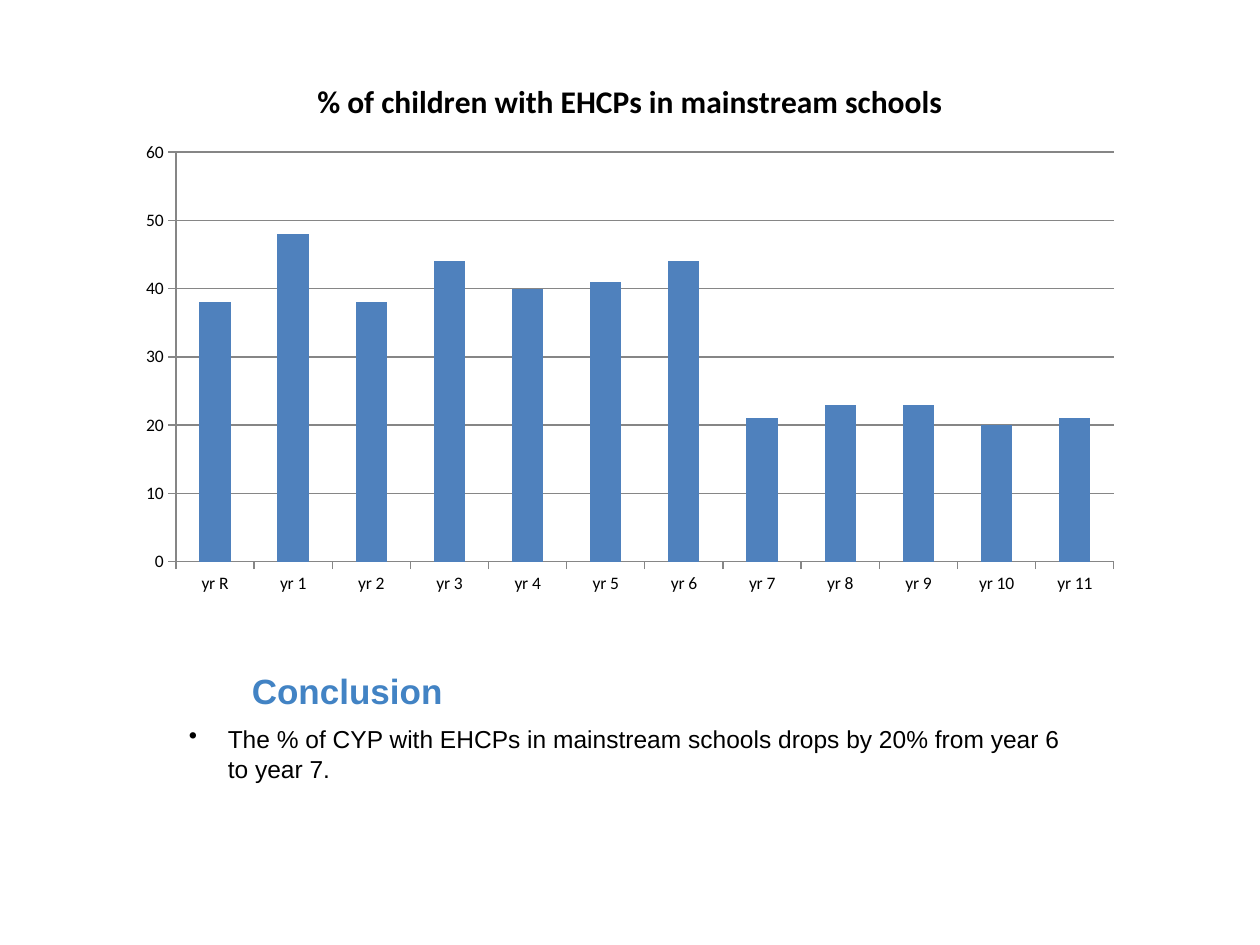
import pptx
import pptx.chart.data
import pptx.dml.color
import pptx.enum.chart
import pptx.enum.text
import pptx.oxml
import pptx.oxml.ns
import pptx.util

BLACK = pptx.dml.color.RGBColor(0x00, 0x00, 0x00)
GRAY = pptx.dml.color.RGBColor(0x86, 0x86, 0x86)
BAR_BLUE = pptx.dml.color.RGBColor(0x4F, 0x81, 0xBD)
HEADING_BLUE = pptx.dml.color.RGBColor(0x42, 0x83, 0xC4)

HEADLINE = "% of children with EHCPs in mainstream schools"
YEARS = ["yr R"] + [f"yr {year}" for year in range(1, 12)]
SHARES = [38, 48, 38, 44, 40, 41, 44, 21, 23, 23, 20, 21]


class SlideBuilder:
    """Holds the style and the current slide; boxes are shares of the slide's size."""

    text_font = "Arial"
    chart_font = "Calibri"

    def __init__(self, deck):
        self.width, self.height = deck.slide_width, deck.slide_height
        self.slide = deck.slides.add_slide(deck.slide_layouts[6])

    def box(self, left, top, width, height):
        return (int(left * self.width), int(top * self.height),
                int(width * self.width), int(height * self.height))

    def style(self, font, color, **values):
        for name, value in values.items():
            setattr(font, name, value)
        font.color.rgb = color

    def text(self, words, place, size, color, bold=False,
             anchor=pptx.enum.text.MSO_ANCHOR.TOP):
        frame = self.slide.shapes.add_textbox(*self.box(*place)).text_frame
        frame.word_wrap = True
        frame.vertical_anchor = anchor
        paragraph = frame.paragraphs[0]
        run = paragraph.add_run()
        run.text = words
        self.style(run.font, color, name=self.text_font,
                   size=pptx.util.Pt(size), bold=bold)
        return paragraph

    def bullet(self, words, place, size, color, indent):
        paragraph = self.text(words, place, size, color)
        paragraph.space_before = pptx.util.Pt(size * 0.2)
        properties = paragraph._p.get_or_add_pPr()
        hang = pptx.util.Inches(indent)
        properties.set("marL", str(hang))
        properties.set("indent", str(-hang))
        properties.append(pptx.oxml.parse_xml(
            f'<a:buChar {pptx.oxml.ns.nsdecls("a")} char="•"/>'))

    def column_chart(self, title, categories, values, place, top_value, step):
        data = pptx.chart.data.CategoryChartData()
        data.categories = categories
        data.add_series(title, values)
        chart = self.slide.shapes.add_chart(
            pptx.enum.chart.XL_CHART_TYPE.COLUMN_CLUSTERED,
            *self.box(*place), data).chart
        chart.has_legend = False
        self.style(chart.font, BLACK, name=self.chart_font, size=pptx.util.Pt(10))

        # Chart title
        chart.has_title = True
        chart.chart_title.include_in_layout = False
        heading = chart.chart_title.text_frame
        heading.text = title
        self.style(heading.paragraphs[0].runs[0].font, BLACK,
                   name=self.chart_font, size=pptx.util.Pt(18), bold=True)

        # Columns
        plot = chart.plots[0]
        plot.gap_width = 150
        plot.vary_by_categories = False
        columns = plot.series[0]
        columns.format.fill.solid()
        columns.format.fill.fore_color.rgb = BAR_BLUE

        # Axes and gridlines
        scale = {"minimum_scale": 0, "maximum_scale": top_value,
                 "major_unit": step, "has_major_gridlines": True}
        for name, value in scale.items():
            setattr(chart.value_axis, name, value)
        for axis in (chart.category_axis, chart.value_axis):
            axis.major_tick_mark = pptx.enum.chart.XL_TICK_MARK.OUTSIDE
        for part in (chart.category_axis, chart.value_axis,
                     chart.value_axis.major_gridlines):
            part.format.line.color.rgb = GRAY
            part.format.line.width = pptx.util.Pt(0.75)


def main():
    deck = pptx.Presentation()
    deck.slide_width = pptx.util.Inches(10)
    deck.slide_height = pptx.util.Inches(7.5)
    page = SlideBuilder(deck)

    # Share of children by school year
    page.column_chart(HEADLINE, YEARS, SHARES, (0.1, 0.06, 0.8, 0.58),
                      top_value=60, step=10)

    # Conclusion
    page.text("Conclusion", (0.19, 0.68, 0.6, 0.08), 20, HEADING_BLUE, bold=True,
              anchor=pptx.enum.text.MSO_ANCHOR.BOTTOM)
    page.bullet("The % of CYP with EHCPs in mainstream schools drops by 20% "
                "from year 6 to year 7.",
                (0.14, 0.76, 0.72, 0.16), 14, BLACK, indent=0.31)

    deck.save("out.pptx")


if __name__ == "__main__":
    main()
